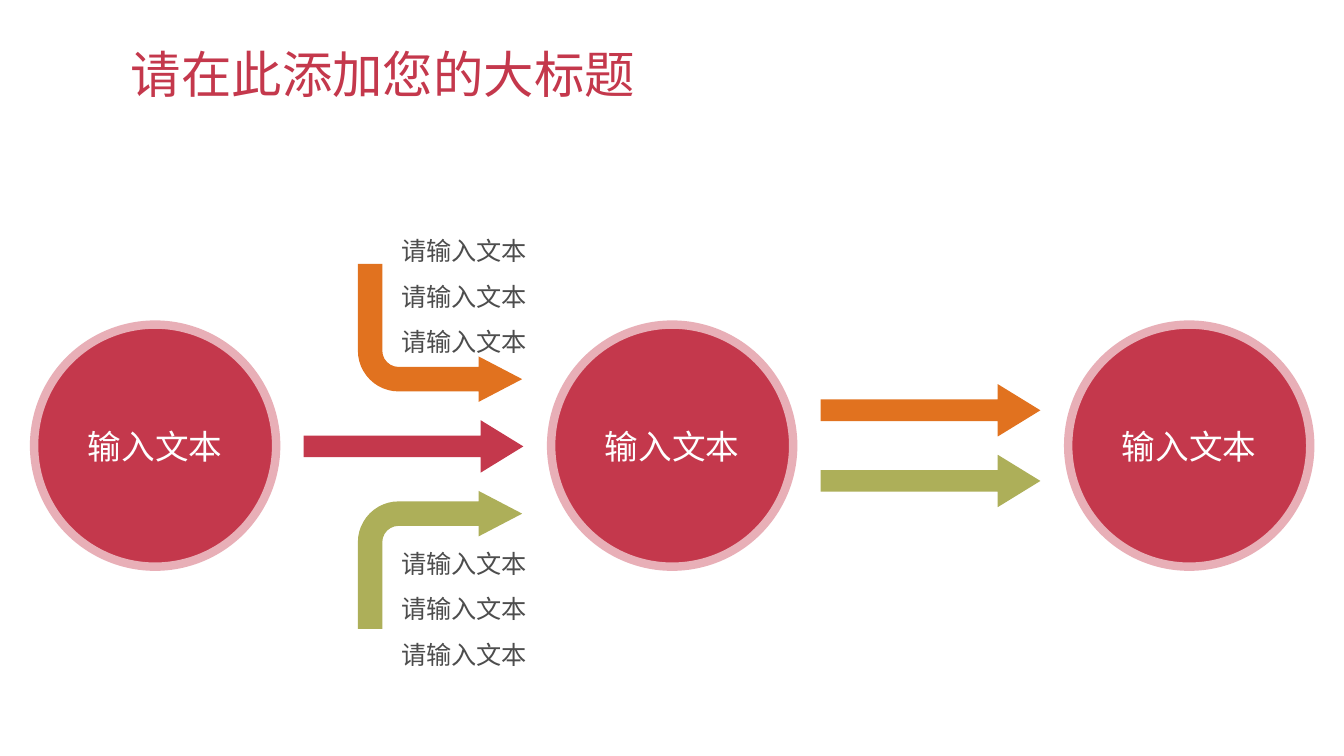
from pptx import Presentation
from pptx.dml.color import RGBColor
from pptx.enum.shapes import MSO_SHAPE as Preset
from pptx.enum.text import MSO_ANCHOR as Anchor, PP_ALIGN as Align
from pptx.oxml.ns import qn
from pptx.util import Cm, Pt
from lxml.etree import SubElement

RED, PINK, ORANGE, GREEN = "C4384C", "E8AFB7", "E1721F", "ADAF59"
WHITE, GREY = "FEFFFF", "4D4D4D"


def color(hex_code):
    return RGBColor.from_string(hex_code)


class FlowSlide:
    font_name = "Noto Sans CJK SC"

    def __init__(self, deck):
        self.slide = deck.slides.add_slide(deck.slide_layouts[6])

    def set_text(self, shape, text, size, ink, anchor, align=Align.LEFT, spacing=1.0):
        frame = shape.text_frame
        frame.text = text
        frame.word_wrap = True
        frame.vertical_anchor = anchor
        for paragraph in frame.paragraphs:
            paragraph.alignment = align
            paragraph.line_spacing = spacing
            for run in paragraph.runs:
                run.font.size = Pt(size)
                run.font.color.rgb = color(ink)
                run.font.name = self.font_name
                east_asian = SubElement(run.font._element, qn("a:ea"))
                east_asian.set("typeface", self.font_name)

    def text(self, box, text, size, ink, anchor, spacing):
        textbox = self.slide.shapes.add_textbox(*map(Cm, box))
        self.set_text(textbox, text, size, ink, anchor, spacing=spacing)

    def shape(self, preset, box, fill, adjustments=()):
        shape = self.slide.shapes.add_shape(preset, *map(Cm, box))
        shape.shadow.inherit = False
        shape.fill.solid()
        shape.fill.fore_color.rgb = color(fill)
        shape.line.fill.background()
        for index, value in enumerate(adjustments):
            shape.adjustments[index] = value
        return shape

    def circle(self, left, text):
        circle = self.shape(Preset.OVAL, (left, 8.18, 6.1, 6.1), RED)
        circle.line.color.rgb = color(PINK)
        circle.line.width = Pt(6)
        self.set_text(circle, text, 24, WHITE, Anchor.MIDDLE, Align.CENTER)

    def straight_arrow(self, left, top, fill):
        self.shape(Preset.RIGHT_ARROW, (left, top, 5.54, 1.32), fill, (0.413, 0.814))

    def bent_arrow(self, top, fill, downward=False):
        arrow = self.shape(Preset.BENT_ARROW, (9.02, top, 4.14, 3.48), fill,
                           (0.177, 0.165, 0.316, 0.295))
        if downward:
            arrow._element.spPr.find(qn("a:xfrm")).set("flipV", "1")


def main():
    deck = Presentation()
    deck.slide_width, deck.slide_height = Cm(33.87), Cm(19.05)
    flow = FlowSlide(deck)

    flow.text((3.05, 0.76, 27.79, 2.36), "请在此添加您的大标题", 36, RED, Anchor.MIDDLE, 0.9)

    flow.straight_arrow(7.65, 10.59, RED)
    flow.bent_arrow(12.37, GREEN)
    flow.bent_arrow(6.65, ORANGE, downward=True)

    for stage in range(3):
        flow.circle(0.86 + 13.03 * stage, "输入文本")

    for top, fill in ((9.68, ORANGE), (11.46, GREEN)):
        flow.straight_arrow(20.68, top, fill)

    branch_notes = "\n".join(["请输入文本"] * 3)
    for top, anchor in ((5.51, Anchor.MIDDLE), (13.46, Anchor.BOTTOM)):
        flow.text((9.86, top, 4.88, 3.53), branch_notes, 18, GREY, anchor, 1.5)

    deck.save("out.pptx")


if __name__ == "__main__":
    main()
